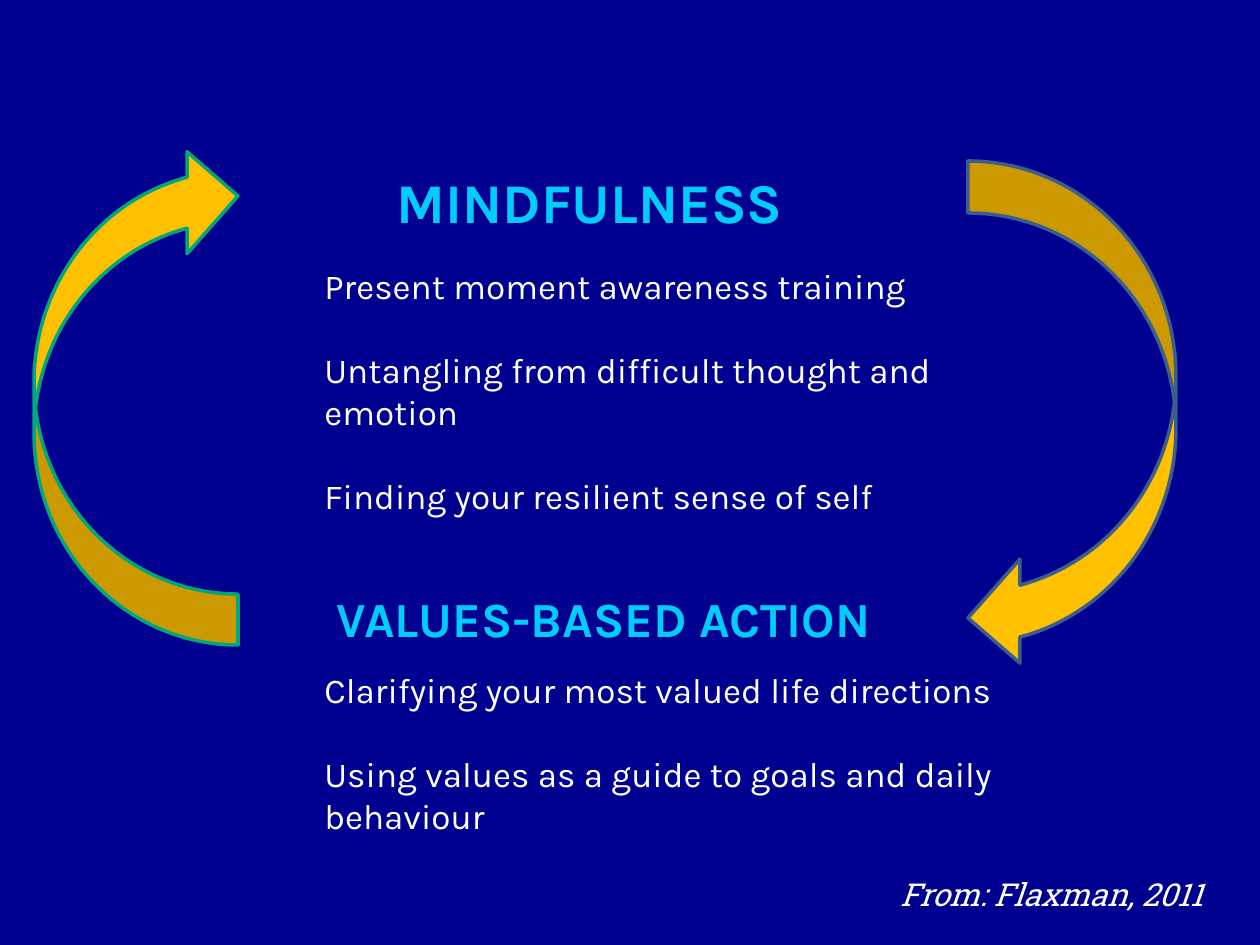
import pptx
import pptx.util
import pptx.dml.color
import pptx.enum.shapes
import pptx.enum.text

PX = 914400 // 126


def color(value):
    return pptx.dml.color.RGBColor.from_string(value)


def write_text(box, place, paragraphs, align, gap, format_values, text_color):
    box.left, box.top, box.width, box.height = [n * PX for n in place]
    frame = box.text_frame
    frame.word_wrap = True
    frame.auto_size = pptx.enum.text.MSO_AUTO_SIZE.NONE
    frame.vertical_anchor = pptx.enum.text.MSO_ANCHOR.TOP
    for index, text in enumerate(paragraphs):
        para = frame.add_paragraph() if index else frame.paragraphs[0]
        para.alignment = align
        para.space_before = pptx.util.Pt(gap if index else 0)
        span = para.add_run()
        span.text = text
        for name, value in format_values.items():
            setattr(span.font, name, value)
        span.font.color.rgb = color(text_color)


deck = pptx.Presentation()
deck.slide_width = pptx.util.Inches(10)
deck.slide_height = pptx.util.Inches(7.5)
page = deck.slides.add_slide(deck.slide_layouts[5])
page.background.fill.solid()
page.background.fill.fore_color.rgb = color("000090")

CENTER = pptx.enum.text.PP_ALIGN.CENTER
LEFT = pptx.enum.text.PP_ALIGN.LEFT
heading = {"name": "Karla", "size": pptx.util.Pt(32), "bold": True}
subheading = {**heading, "size": pptx.util.Pt(28)}
body = {"name": "Karla", "size": pptx.util.Pt(20)}
credit = {"name": "Roboto Slab", "size": pptx.util.Pt(18), "italic": True}

write_text(page.shapes.title, (292, 161, 596, 81), ["MINDFULNESS"],
           CENTER, 0, heading, "00CCFF")

mindfulness = [
    "Present moment awareness training",
    "Untangling from difficult thought and emotion",
    "Finding your resilient sense of self",
]
values = [
    "Clarifying your most valued life directions",
    "Using values as a guide to goals and daily behaviour",
]
for place, paragraphs, align, format_values, text_color in [
    ((292, 582, 635, 72), ["VALUES-BASED ACTION "], CENTER, subheading, "00CCFF"),
    ((312, 258, 735, 263), mindfulness, LEFT, body, "FFFFFF"),
    ((312, 662, 695, 183), values, LEFT, body, "FFFFFF"),
    ((888, 869, 372, 50), ["From: Flaxman, 2011"], LEFT, credit, "FFFFFF"),
]:
    box = page.shapes.add_textbox(0, 0, 0, 0)
    write_text(box, place, paragraphs, align, 24, format_values, text_color)

for place, rotation, line_color in [
    ((968, 161, 208, 509), 0, "3A5F8C"),
    ((34, 145, 204, 500), 180, "00A77A"),
]:
    arrow = page.shapes.add_shape(
        pptx.enum.shapes.MSO_SHAPE.CURVED_LEFT_ARROW, *[n * PX for n in place])
    arrow.rotation = rotation
    arrow.shadow.inherit = False
    arrow.fill.solid()
    arrow.fill.fore_color.rgb = color("FFC000")
    arrow.line.color.rgb = color(line_color)
    arrow.line.width = pptx.util.Pt(2)

deck.save("out.pptx")
